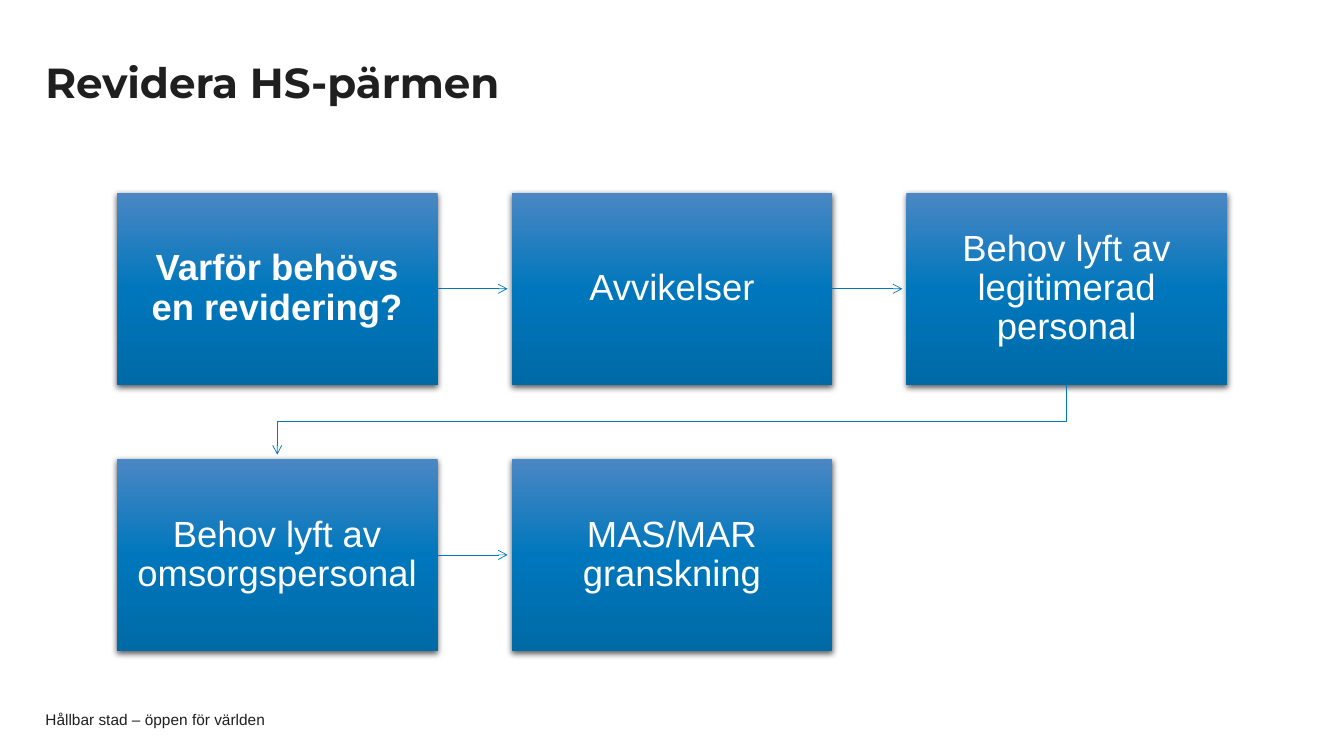
from copy import deepcopy

from lxml import etree
from pptx import Presentation
from pptx.dml.color import RGBColor
from pptx.enum.shapes import MSO_CONNECTOR, MSO_SHAPE
from pptx.enum.text import MSO_ANCHOR, PP_ALIGN
from pptx.oxml.ns import qn
from pptx.util import Inches, Pt

STRAIGHT = MSO_CONNECTOR.STRAIGHT
RECTANGLE = MSO_SHAPE.RECTANGLE
MIDDLE = MSO_ANCHOR.MIDDLE
CENTER, LEFT = PP_ALIGN.CENTER, PP_ALIGN.LEFT
RIGHT_SIDE = 3

COLORS = {
    "ink": "1F1F1F",
    "white": "FFFFFF",
    "top": "4B87C4",
    "blue": "0077BC",
    "bottom": "006AA7",
    "shadow": "000000",
}

# Step grid, in inches
GRID_LEFT, GRID_RIGHT, GRID_TOP = 1.16, 12.17, 1.91
COLUMNS = 3
BOX_WIDTH, BOX_HEIGHT = 3.18, 1.91
COLUMN_PITCH = (GRID_RIGHT - GRID_LEFT - BOX_WIDTH) / (COLUMNS - 1)
ROW_PITCH = 2.64
ARROW_CLEARANCE = 0.04

STEPS = [
    "Varför behövs en revidering?",
    "Avvikelser",
    "Behov lyft av legitimerad personal",
    "Behov lyft av omsorgspersonal",
    "MAS/MAR granskning",
]


def color(name):
    return RGBColor.from_string(COLORS[name])


class FlowSlide:
    def __init__(self, deck):
        self.page = deck.slides.add_slide(deck.slide_layouts[6])
        self.shapes = self.page.shapes

    def set_text(self, shape, text, size, ink, font="Arial", bold=False,
                 align=LEFT, spacing=1.0, inset_x=0, inset_y=0):
        frame = shape.text_frame
        frame.word_wrap = True
        frame.vertical_anchor = MIDDLE
        frame.margin_left = frame.margin_right = Inches(inset_x)
        frame.margin_top = frame.margin_bottom = Inches(inset_y)
        para = frame.paragraphs[0]
        para.alignment = align
        para.line_spacing = spacing
        span = para.add_run()
        span.text = text
        span.font.name = font
        span.font.size = Pt(size)
        span.font.bold = bold
        span.font.color.rgb = color(ink)

    def label(self, left, top, width, height, text, size, **style):
        box = self.shapes.add_textbox(*map(Inches, (left, top, width, height)))
        self.set_text(box, text, size, "ink", **style)

    def step(self, column, row, text, bold):
        left = GRID_LEFT + column * COLUMN_PITCH
        top = GRID_TOP + row * ROW_PITCH
        box = self.shapes.add_shape(
            RECTANGLE, *map(Inches, (left, top, BOX_WIDTH, BOX_HEIGHT)))
        box.line.fill.background()
        self.shade(box)
        self.cast_shadow(box)
        self.set_text(box, text, 26, "white", bold=bold, align=CENTER,
                      spacing=0.9, inset_x=0.16, inset_y=0.16)
        return box

    def shade(self, box):
        """Fill the box with a three-stop gradient running downwards."""
        box.fill.gradient()
        box.fill.gradient_angle = 270
        stops = box._element.spPr.find(qn("a:gradFill")).find(qn("a:gsLst"))
        stops.append(deepcopy(stops[-1]))
        names = ("top", "blue", "bottom")
        for index, (stop, name) in enumerate(zip(box.fill.gradient_stops, names)):
            stop.position = index / 2
            stop.color.rgb = color(name)

    def cast_shadow(self, box):
        box.shadow.inherit = False
        effects = box._element.spPr.find(qn("a:effectLst"))
        shadow = etree.SubElement(
            effects, qn("a:outerShdw"), blurRad=str(Pt(4.5)), dist=str(Pt(1.5)),
            dir="5400000", algn="ctr", rotWithShape="0")
        tint = etree.SubElement(shadow, qn("a:srgbClr"), val=COLORS["shadow"])
        etree.SubElement(tint, qn("a:alpha"), val="63000")

    def style_arrow(self, arrow):
        arrow.line.color.rgb = color("blue")
        arrow.line.width = Pt(0.5)
        properties = arrow._element.spPr
        etree.SubElement(properties.find(qn("a:ln")), qn("a:tailEnd"), type="arrow")
        etree.SubElement(properties, qn("a:effectLst"))

    def arrow_across(self, source, target):
        middle = source.top + source.height // 2
        arrow = self.shapes.add_connector(
            STRAIGHT, source.left + source.width, middle,
            target.left - Inches(ARROW_CLEARANCE), middle)
        arrow.begin_connect(source, RIGHT_SIDE)
        self.style_arrow(arrow)

    def arrow_to_next_row(self, source, target):
        start_x = source.left + source.width // 2
        end_x = target.left + target.width // 2
        start_y = source.top + source.height
        turn_y = (start_y + target.top) // 2
        builder = self.shapes.build_freeform(start_x, start_y)
        builder.add_line_segments(
            [(start_x, turn_y), (end_x, turn_y),
             (end_x, target.top - Inches(ARROW_CLEARANCE))], close=False)
        arrow = builder.convert_to_shape()
        arrow.fill.background()
        self.style_arrow(arrow)


def main():
    deck = Presentation()
    deck.slide_width, deck.slide_height = Inches(13.33), Inches(7.5)
    slide = FlowSlide(deck)
    slide.label(0.45, 7.06, 9.45, 0.16, "Hållbar stad – öppen för världen", 11)
    slide.label(0.45, 0.44, 10.03, 0.81, "Revidera HS-pärmen", 30,
                font="Montserrat", bold=True, spacing=0.9, inset_y=0.05)

    boxes = []
    for index, text in enumerate(STEPS):
        row, column = divmod(index, COLUMNS)
        boxes.append(slide.step(column, row, text, bold=index == 0))
    for source, target in zip(boxes, boxes[1:]):
        if source.top == target.top:
            slide.arrow_across(source, target)
        else:
            slide.arrow_to_next_row(source, target)
    deck.save("out.pptx")


if __name__ == "__main__":
    main()
